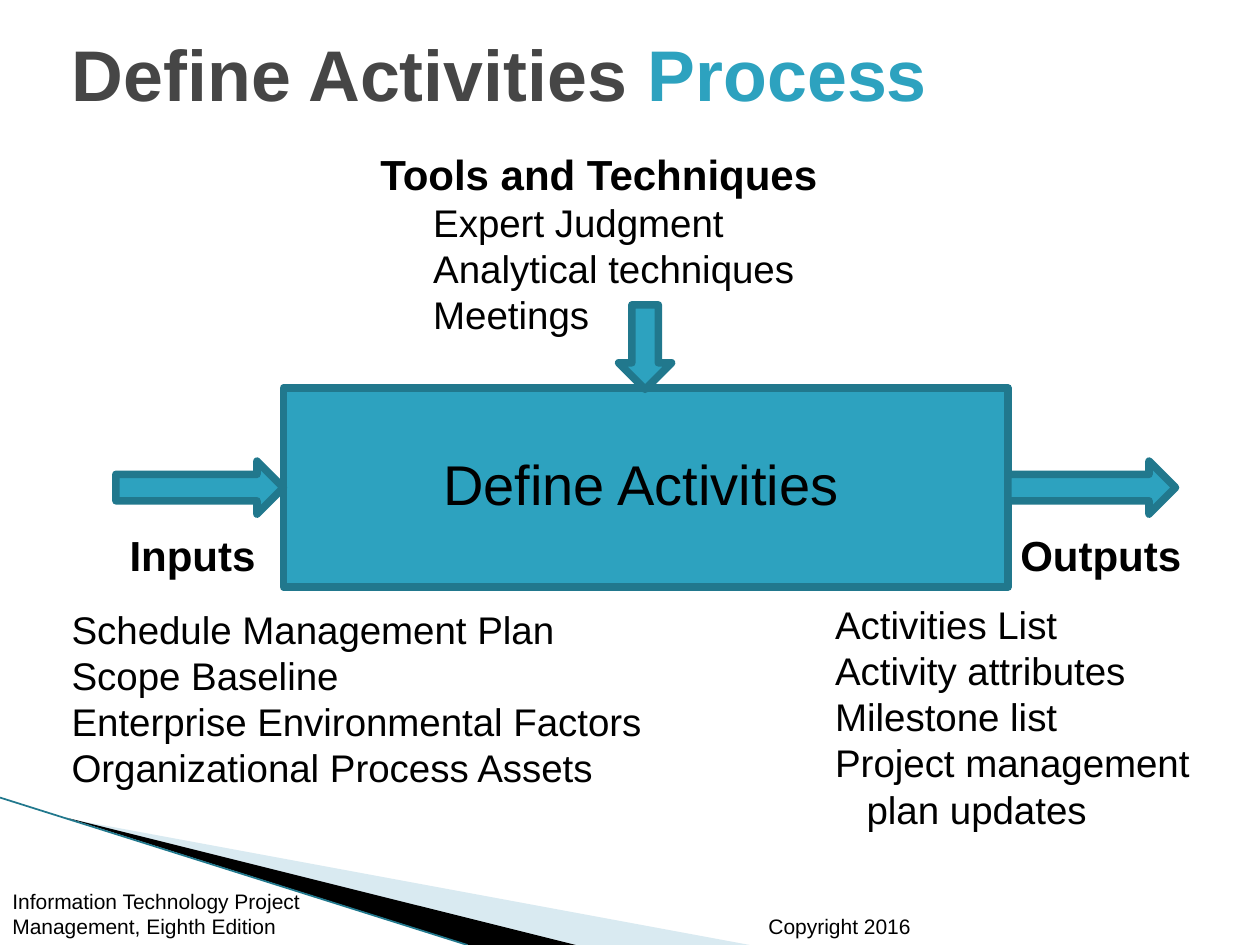
"""Build the Define Activities process slide."""
import pptx
import pptx.util
import pptx.dml.color
import pptx.enum.shapes
import pptx.enum.text
import pptx.oxml.ns
import lxml.etree

PX = 9144
TEAL, EDGE, BLACK = "2DA2BF", "21788D", "000000"
SHAPE = pptx.enum.shapes.MSO_SHAPE
ANCHOR = pptx.enum.text.MSO_ANCHOR


def rgb(color):
    """Turn a hex string into a colour."""
    return pptx.dml.color.RGBColor.from_string(color)


def emu(*lengths):
    """Turn px lengths into EMU."""
    return [n * PX for n in lengths]


def set_font(font, size, color=BLACK, bold=False):
    """Format a font in Arial."""
    font.name, font.size, font.bold = "Arial", pptx.util.Pt(size), bold
    font.color.rgb = rgb(color)


def add_text(s, box, lines, size, heading=None, margin=0, indent=0, anchor=ANCHOR.TOP):
    """Add a text box with an optional bold heading above its lines."""
    tf = s.shapes.add_textbox(*emu(*box)).text_frame
    tf.word_wrap, tf.vertical_anchor = True, anchor
    texts = ([heading] if heading else []) + lines
    for i, text in enumerate(texts):
        p = tf.paragraphs[0] if i == 0 else tf.add_paragraph()
        p.text = text
        if text == heading:
            set_font(p.font, 24, bold=True)
            continue
        if margin:
            pPr = p._p.get_or_add_pPr()
            pPr.set("marL", str(margin * PX))
            pPr.set("indent", str(indent * PX))
        set_font(p.font, size)


def add_block(s, kind, box):
    """Add a teal shape with a thick darker outline."""
    sp = s.shapes.add_shape(kind, *emu(*box))
    sp.shadow.inherit = False
    sp.fill.solid()
    sp.fill.fore_color.rgb = rgb(TEAL)
    sp.line.color.rgb = rgb(EDGE)
    sp.line.width = pptx.util.Pt(4.33)


def add_wedge(s, points, color, alpha=None):
    """Add a filled outline without a border."""
    builder = s.shapes.build_freeform(*points[0], scale=PX)
    builder.add_line_segments(points[1:], close=True)
    sp = builder.convert_to_shape()
    sp.shadow.inherit = False
    sp.fill.solid()
    sp.fill.fore_color.rgb = rgb(color)
    sp.line.fill.background()
    if alpha:
        clr = sp._element.spPr.find(".//" + pptx.oxml.ns.qn("a:srgbClr"))
        lxml.etree.SubElement(clr, pptx.oxml.ns.qn("a:alpha")).set("val", str(alpha * 1000))


def add_footer(s, x, y):
    """Add the corner wedges and the footer texts from the corner line's start."""
    add_wedge(s, [(x + 55, y + 17), (x + 595, y + 117), (x + 456, y + 117)], "A0CBDC", 40)
    add_wedge(s, [(x + 53, y + 16), (x + 457, y + 117), (x + 372, y + 117)], BLACK)
    line = s.shapes.add_connector(
        pptx.enum.shapes.MSO_CONNECTOR.STRAIGHT, *emu(x, y, x + 371, y + 117))
    line.line.color.rgb = rgb(EDGE)
    line.line.width = pptx.util.Pt(1)
    lxml.etree.SubElement(line._element.spPr, pptx.oxml.ns.qn("a:effectLst"))
    for left, width, text in ((600, 175, "Copyright 2016"), (
            0, 283, "Information Technology Project Management, Eighth Edition")):
        add_text(s, (x + left, y + 77, width, 40), [text], 12, anchor=ANCHOR.BOTTOM)


def add_title(s, box):
    """Place and format the two-colour title."""
    sp = s.shapes.title
    sp.left, sp.top, sp.width, sp.height = emu(*box)
    tf = sp.text_frame
    tf.vertical_anchor = ANCHOR.MIDDLE
    p = tf.paragraphs[0]
    p.alignment = pptx.enum.text.PP_ALIGN.LEFT
    for text, color in (("Define Activities ", "464646"), ("Process", TEAL)):
        r = p.add_run()
        r.text = text
        set_font(r.font, 41, color, True)


def add_process(s, x, y, w, h):
    """Add the process box with its arrows and labels."""
    arrow_w, arrow_h = 133, 42
    arrow_y = y + (h - arrow_h) // 2
    add_block(s, SHAPE.RECTANGLE, (x, y, w, h))
    for left in (x - arrow_w, x + w):
        add_block(s, SHAPE.RIGHT_ARROW, (left, arrow_y, arrow_w, arrow_h))
    add_text(s, (x + 117, y + 44, 400, 64), ["Define Activities"], 32)
    for left, label in ((x - 132, "Inputs"), (x + w, "Outputs")):
        add_text(s, (left, y + 107, 150, 50), [], 24, heading=label)
    add_text(s, (x + 67, y - 195, 500, 162),
             ["Expert Judgment", "Analytical techniques", "Meetings"], 22,
             heading="Tools and Techniques", margin=42)
    add_block(s, SHAPE.DOWN_ARROW, (x + (w - arrow_h) // 2, y - 66, arrow_h, 67))
    add_text(s, (x - 178, y + 168, 483, 158),
             ["Schedule Management Plan", "Scope Baseline",
              "Enterprise Environmental Factors", "Organizational Process Assets"], 22)
    add_text(s, (x + 428, y + 164, 317, 195),
             ["Activities List", "Activity attributes", "Milestone list",
              "Project management plan updates"], 22, margin=25, indent=-25)


def main():
    """Build and save the slide."""
    prs = pptx.Presentation()
    prs.slide_width, prs.slide_height = emu(1000, 750)
    s = prs.slides.add_slide(prs.slide_layouts[5])
    add_footer(s, 0, 633)
    add_title(s, (47, -5, 923, 125))
    add_process(s, 225, 308, 575, 158)
    prs.save("out.pptx")


if __name__ == "__main__":
    main()
